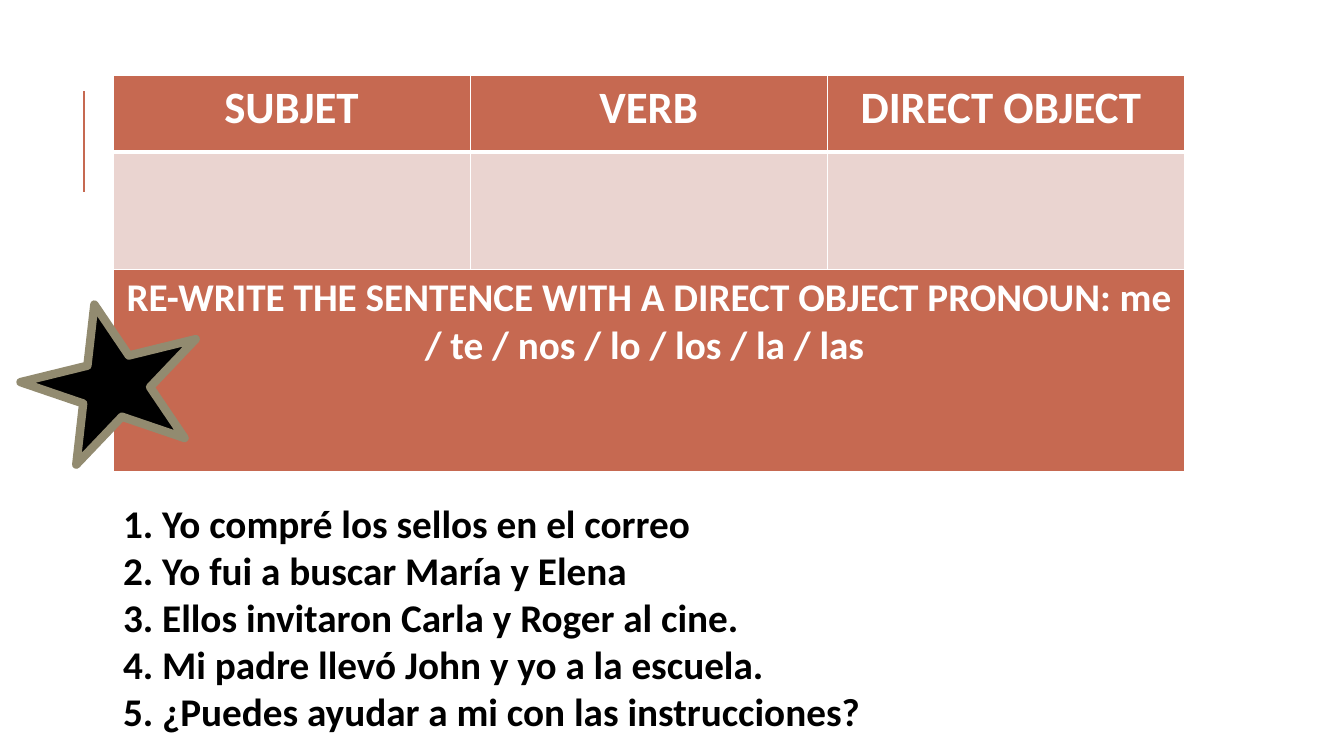
from dataclasses import dataclass

from lxml import etree
from pptx import Presentation
from pptx.dml.color import RGBColor
from pptx.enum.shapes import MSO_CONNECTOR, MSO_SHAPE
from pptx.enum.text import MSO_ANCHOR, MSO_AUTO_SIZE, PP_ALIGN
from pptx.oxml.ns import qn
from pptx.util import Inches, Pt

STAR = MSO_SHAPE.STAR_5_POINT
LINE = MSO_CONNECTOR.STRAIGHT
TOP = MSO_ANCHOR.TOP
GROW = MSO_AUTO_SIZE.SHAPE_TO_FIT_TEXT
LEFT, CENTER = PP_ALIGN.LEFT, PP_ALIGN.CENTER

RUST = RGBColor(0xC6, 0x69, 0x51)
PINK = RGBColor(0xEA, 0xD4, 0xD0)
OLIVE = RGBColor(0x92, 0x8B, 0x70)
BLACK = RGBColor(0, 0, 0)
WHITE = RGBColor(0xFF, 0xFF, 0xFF)

FONT = "Calibri"
EDGE = 1.12
WIDTH = 10.63


@dataclass
class Row:
    texts: list[str]
    height: float
    fill: RGBColor
    base: float


@dataclass
class Grid:
    top: float
    size: int
    rows: list[Row]


GRIDS = [
    Grid(0.75, 32, [
        Row(["SUBJET", "VERB", "DIRECT OBJECT "], 0.76, RUST, 3),
        Row(["", "", ""], 1.16, PINK, 1),
    ]),
    Grid(2.67, 28, [
        Row(["RE-WRITE THE SENTENCE WITH A DIRECT OBJECT PRONOUN: "
             "me / te / nos / lo / los / la / las "], 2.02, RUST, 3),
    ]),
]

TASKS = [
    "1. Yo compré los sellos en el correo",
    "2. Yo fui a buscar María y Elena",
    "3. Ellos invitaron Carla y Roger al cine.",
    "4. Mi padre llevó John y yo a la escuela.",
    "5. ¿Puedes ayudar a mi con las instrucciones?",
]


def add_run(para, text: str, size: int, color: RGBColor, align) -> None:
    para.alignment = align
    run = para.add_run()
    run.text = text
    run.font.name = FONT
    run.font.size = Pt(size)
    run.font.bold = True
    run.font.color.rgb = color


def add_edges(cell, base: float) -> None:
    props = cell._tc.get_or_add_tcPr()
    for tag, width in (("lnL", 1), ("lnR", 1), ("lnT", 1), ("lnB", base)):
        line = etree.SubElement(props, qn(f"a:{tag}"), w=str(Pt(width)))
        fill = etree.SubElement(line, qn("a:solidFill"))
        etree.SubElement(fill, qn("a:srgbClr"), val=str(WHITE))


def draw_grid(slide, grid: Grid) -> None:
    count = len(grid.rows[0].texts)
    total = sum(row.height for row in grid.rows)
    table = slide.shapes.add_table(
        len(grid.rows), count, Inches(EDGE), Inches(grid.top),
        Inches(WIDTH), Inches(total)).table
    for y, row in enumerate(grid.rows):
        table.rows[y].height = Inches(row.height)
        for x, text in enumerate(row.texts):
            cell = table.cell(y, x)
            add_edges(cell, row.base)
            cell.fill.solid()
            cell.fill.fore_color.rgb = row.fill
            if text:
                add_run(cell.text_frame.paragraphs[0], text,
                        grid.size, WHITE, CENTER)


def draw_bar(slide) -> None:
    bar = slide.shapes.add_connector(
        LINE, Inches(0.83), Inches(1.9), Inches(0.83), Inches(0.9))
    bar.line.color.rgb = RUST
    bar.line.width = Pt(1.5)
    etree.SubElement(bar._element.spPr, qn("a:effectLst"))


def draw_tasks(slide) -> None:
    body = slide.placeholders[1]
    body.left, body.top = Inches(EDGE), Inches(4.9)
    body.width, body.height = Inches(WIDTH), Inches(2.46)
    frame = body.text_frame
    frame.word_wrap = True
    frame.auto_size = GROW
    frame.vertical_anchor = TOP
    for i, task in enumerate(TASKS):
        para = frame.add_paragraph() if i else frame.paragraphs[0]
        para.space_before = Pt(0)
        add_run(para, task, 28, BLACK, LEFT)
        props = para._p.get_or_add_pPr()
        props.set("marL", "0")
        props.set("indent", "0")
        etree.SubElement(props, qn("a:buNone"))


def draw_star(slide) -> None:
    star = slide.shapes.add_shape(
        STAR, Inches(0.22), Inches(3), Inches(1.79), Inches(1.5))
    star.rotation = 346.2
    star.shadow.inherit = False
    star.fill.solid()
    star.fill.fore_color.rgb = BLACK
    star.line.color.rgb = OLIVE
    star.line.width = Pt(6)


def main() -> None:
    deck = Presentation()
    deck.slide_width, deck.slide_height = Inches(13.33), Inches(7.5)
    slide = deck.slides.add_slide(deck.slide_layouts[1])
    title = slide.shapes.title._element
    title.getparent().remove(title)
    draw_bar(slide)
    for grid in GRIDS:
        draw_grid(slide, grid)
    draw_tasks(slide)
    draw_star(slide)
    deck.save("out.pptx")


if __name__ == "__main__":
    main()
